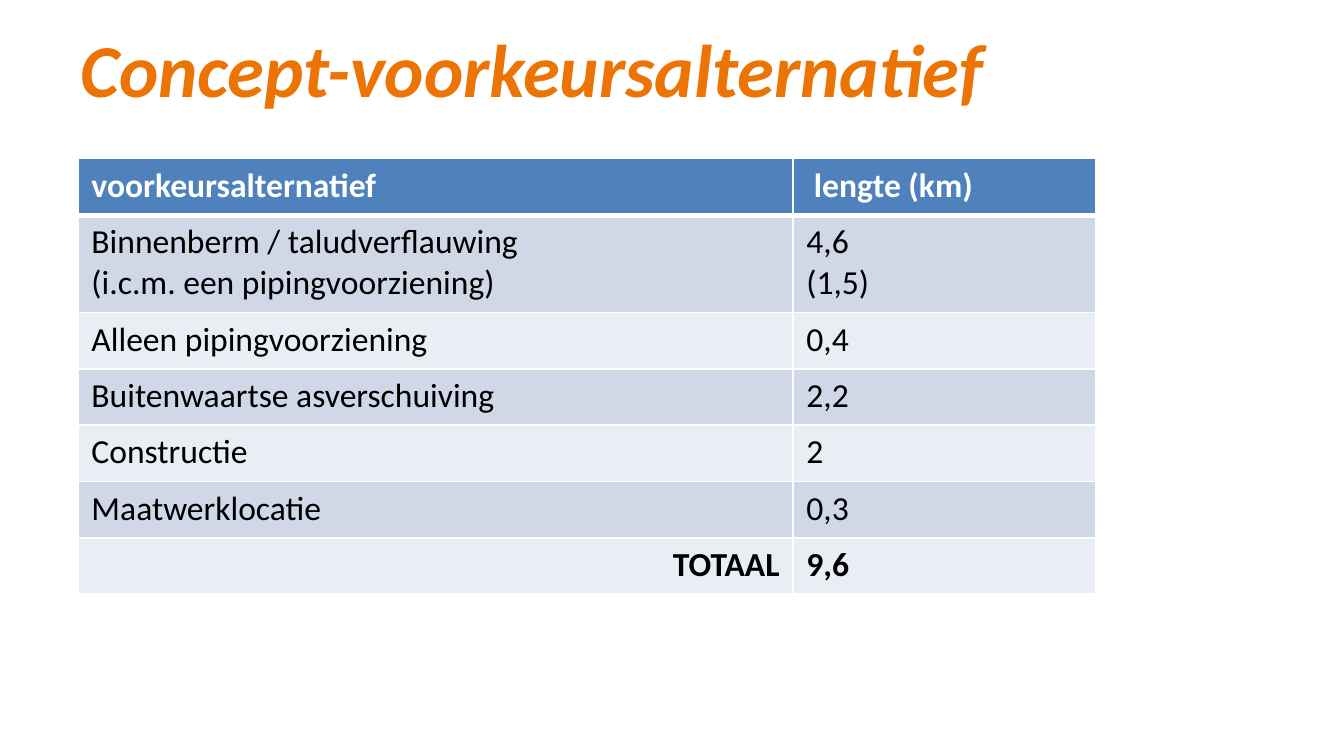
from lxml.etree import SubElement
from pptx import Presentation
from pptx.dml.color import RGBColor
from pptx.enum.text import MSO_ANCHOR, PP_ALIGN
from pptx.oxml.ns import qn
from pptx.util import Pt

TITLE = "Concept-voorkeursalternatief"
ROWS = [
    (["voorkeursalternatief"], [" lengte (km)"]),
    (["Binnenberm / taludverflauwing", "(i.c.m. een pipingvoorziening)"], ["4,6", "(1,5)"]),
    (["Alleen pipingvoorziening"], ["0,4"]),
    (["Buitenwaartse asverschuiving"], ["2,2"]),
    (["Constructie"], ["2"]),
    (["Maatwerklocatie"], ["0,3"]),
    (["TOTAAL"], ["9,6"]),
]

FONT = "Calibri"
ORANGE = RGBColor(0xEC, 0x74, 0x04)
BLUE = RGBColor(0x4F, 0x81, 0xBD)
DARK_BAND = RGBColor(0xD0, 0xD8, 0xE8)
LIGHT_BAND = RGBColor(0xE9, 0xED, 0xF4)
WHITE = RGBColor(0xFF, 0xFF, 0xFF)
BLACK = RGBColor(0, 0, 0)

COLUMN_WIDTHS = [383, 162]
ROW_HEIGHT = 30.2
EXTRA_LINE = 22


def add_span(para, text, size, color, bold=False, italic=False):
    span = para.add_run()
    span.text = text
    font = span.font
    font.name, font.size = FONT, Pt(size)
    font.bold, font.italic = bold, italic
    font.color.rgb = color


def add_borders(cell, bottom_width):
    properties = cell._tc.get_or_add_tcPr()
    for side, width in (("L", 1), ("R", 1), ("T", 1), ("B", bottom_width)):
        line = SubElement(properties, qn(f"a:ln{side}"), w=str(Pt(width)))
        fill = SubElement(line, qn("a:solidFill"))
        SubElement(fill, qn("a:srgbClr"), val=str(WHITE))


def add_title(page):
    box = page.shapes.add_textbox(Pt(36), Pt(14), Pt(648), Pt(42.5))
    frame = box.text_frame
    frame.word_wrap = True
    frame.vertical_anchor = MSO_ANCHOR.TOP
    para = frame.paragraphs[0]
    para.line_spacing = 0.9
    add_span(para, TITLE, 40, ORANGE, bold=True, italic=True)


def add_lengths_table(page):
    heights = [ROW_HEIGHT + EXTRA_LINE * (len(row[0]) - 1) for row in ROWS]
    table = page.shapes.add_table(
        len(ROWS), len(COLUMN_WIDTHS), Pt(41.8), Pt(85),
        Pt(sum(COLUMN_WIDTHS)), Pt(sum(heights)),
    ).table
    for column, width in zip(table.columns, COLUMN_WIDTHS):
        column.width = Pt(width)
    for r, (row, height) in enumerate(zip(ROWS, heights)):
        table.rows[r].height = Pt(height)
        is_header, is_total = r == 0, r == len(ROWS) - 1
        band = BLUE if is_header else DARK_BAND if r % 2 else LIGHT_BAND
        for c, lines in enumerate(row):
            cell = table.cell(r, c)
            add_borders(cell, 3 if is_header else 1)
            cell.fill.solid()
            cell.fill.fore_color.rgb = band
            for i, line in enumerate(lines):
                frame = cell.text_frame
                para = frame.add_paragraph() if i else frame.paragraphs[0]
                if is_total and c == 0:
                    para.alignment = PP_ALIGN.RIGHT
                add_span(para, line, 18, WHITE if is_header else BLACK,
                         bold=is_header or is_total)


deck = Presentation()
deck.slide_width, deck.slide_height = Pt(720), Pt(405)
page = deck.slides.add_slide(deck.slide_layouts[6])
add_title(page)
add_lengths_table(page)
deck.save("out.pptx")
